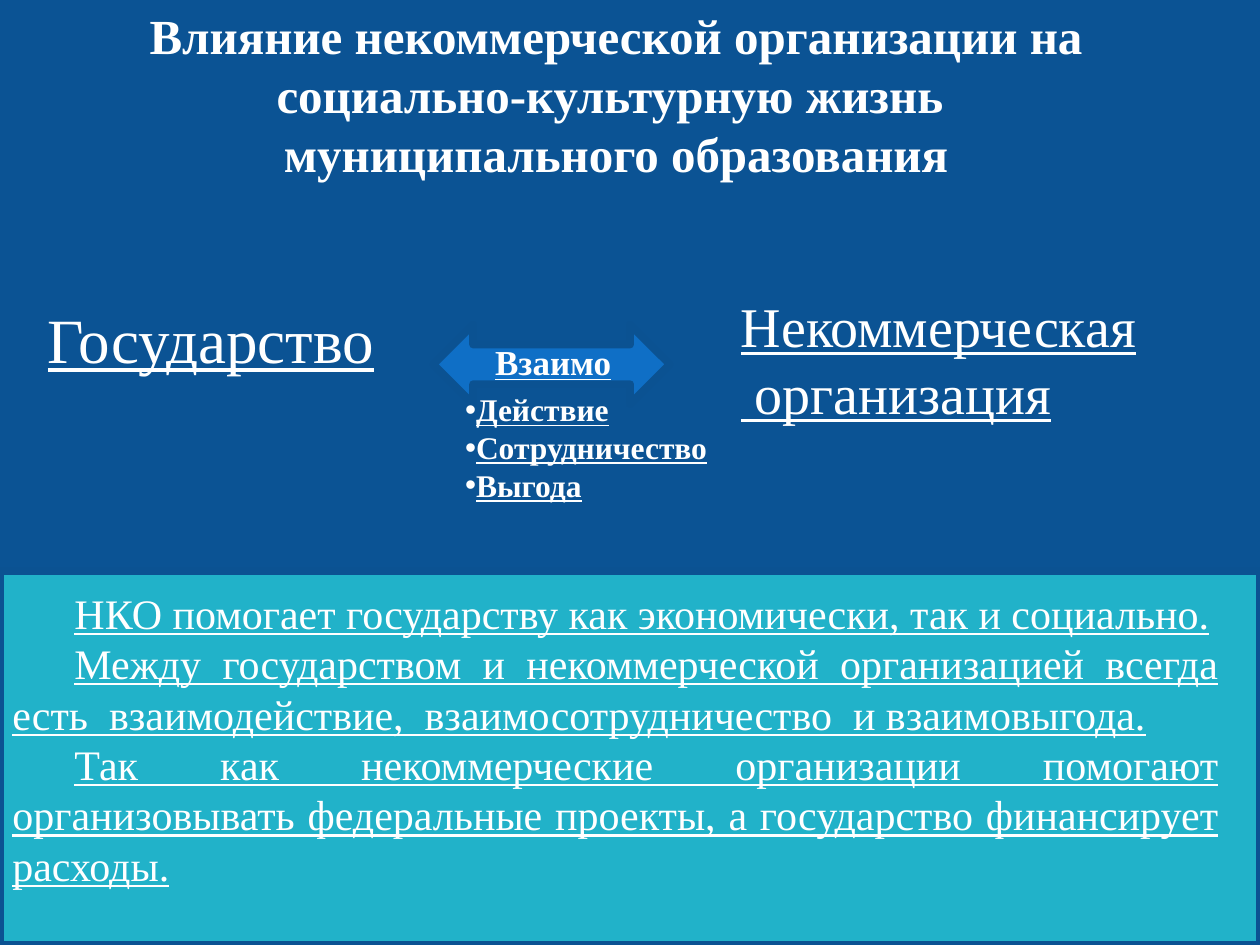
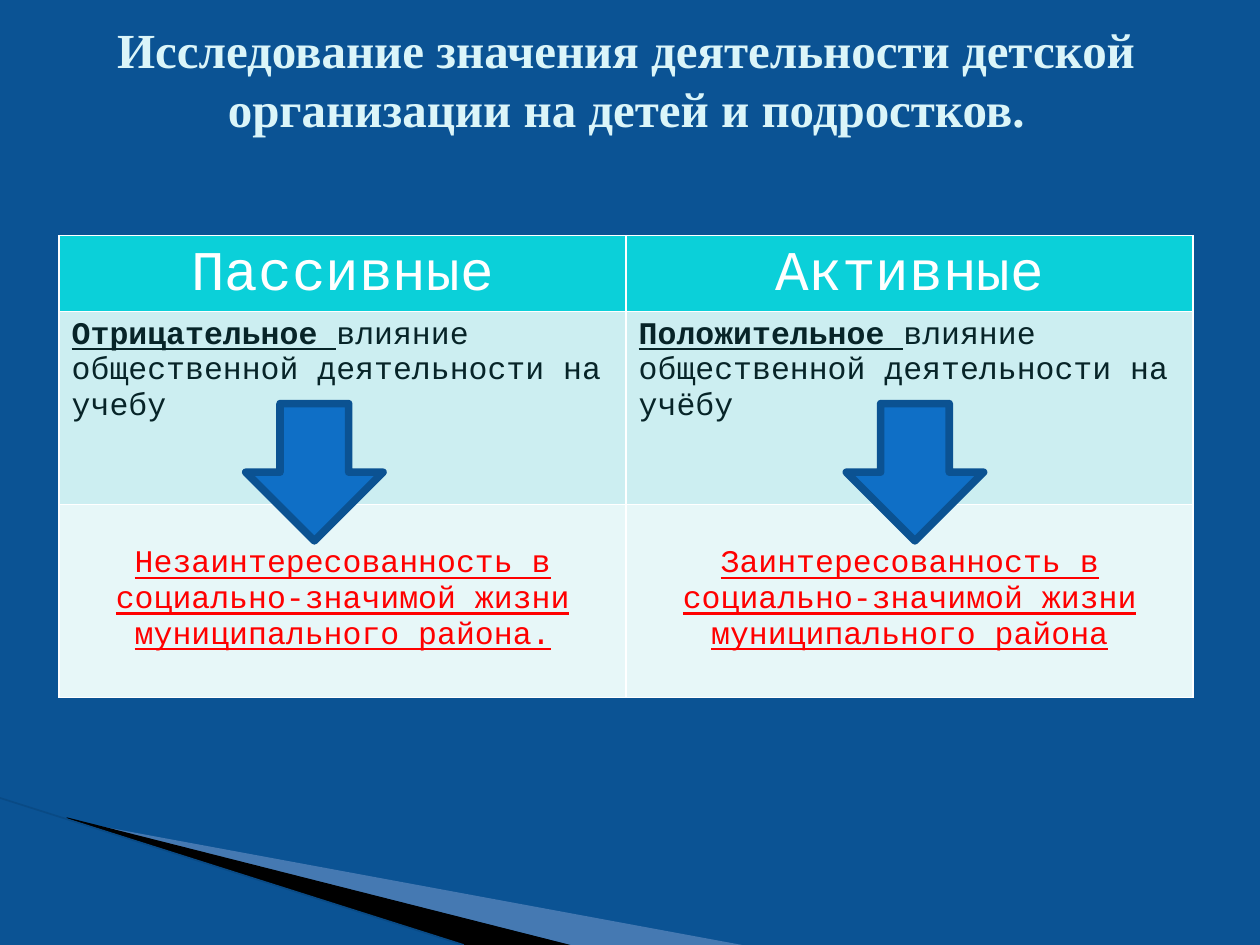
"""Two slides on non-profit organizations and their influence on community life."""
import pptx
import pptx.dml.color
import pptx.enum.shapes
import pptx.enum.text
import pptx.oxml.ns
import pptx.util
from lxml import etree

Pt = pptx.util.Pt
ALIGN = pptx.enum.text.PP_ALIGN
ANCHOR = pptx.enum.text.MSO_ANCHOR
SHAPE = pptx.enum.shapes.MSO_SHAPE
qn = pptx.oxml.ns.qn

SERIF, MONO = "Times New Roman", "Courier New"
WHITE, NAVY, EDGE, BLUE, TEAL = "FFFFFF", "0B5394", "0B5292", "0F6FC6", "21B2C9"
PALE, CYAN, INK, RED, DEEP = "DBF5F9", "0BD0D9", "072428", "FF0000", "094A85"
ROW_TINTS = ("CCEEF1", "E7F7F8")
WIDTH, HEIGHT = 720, 540


def rgb(value):
    """Turn a hex string into a colour."""
    return pptx.dml.color.RGBColor.from_string(value)


def style_run(run, size, color, face=SERIF, bold=False, underline=False):
    """Set the font of one run."""
    run.font.name = face
    run.font.size = Pt(size)
    run.font.bold = bold
    run.font.underline = underline
    run.font.color.rgb = rgb(color)


def add_text(slide, box, lines, size, color=WHITE, anchor=ANCHOR.TOP,
             align=ALIGN.LEFT, bold=False, underline=False):
    """Add a wrapped text box with one paragraph per line and return its frame."""
    frame = slide.shapes.add_textbox(*map(Pt, box)).text_frame
    frame.word_wrap = True
    frame.vertical_anchor = anchor
    for number, line in enumerate(lines):
        paragraph = frame.add_paragraph() if number else frame.paragraphs[0]
        paragraph.text = line
        paragraph.alignment = align
        for run in paragraph.runs:
            style_run(run, size, color, bold=bold, underline=underline)
    return frame


def add_title(slide, box, title, color):
    """Add the centred bold slide title."""
    add_text(slide, box, [title], 28, color, ANCHOR.MIDDLE, ALIGN.CENTER, bold=True)


def add_block(slide, kind, box, fill):
    """Add a filled preset shape with the shared thick edge."""
    block = slide.shapes.add_shape(kind, *map(Pt, box))
    block.shadow.inherit = False
    block.fill.solid()
    block.fill.fore_color.rgb = rgb(fill)
    block.line.color.rgb = rgb(EDGE)
    block.line.width = Pt(4.33)


def new_slide(deck):
    """Add a blank slide with the shared background and corner wedges."""
    slide = deck.slides.add_slide(deck.slide_layouts[6])
    slide.background.fill.solid()
    slide.background.fill.fore_color.rgb = rgb(NAVY)
    add_corner_wedges(slide, (0, 456, 424, HEIGHT - 456))
    return slide


def add_corner_wedges(slide, box):
    """Draw the decorative wedges and line in the lower left corner."""
    left, top, width, height = box
    wedges = (
        ("9DB2E1", 40, ((39.6, 12.7), (width, height), (325.5, height), (39.6, 12))),
        ("000000", 100, ((38.2, 11.3), (325.5, height), (265, height), (38.9, 12))),
    )
    for color, opacity, points in wedges:
        corners = [(left + x, top + y) for x, y in points]
        outline = slide.shapes.build_freeform(*corners[0], scale=Pt(1))
        outline.add_line_segments(corners[1:], close=True)
        wedge = outline.convert_to_shape()
        wedge.shadow.inherit = False
        wedge.line.fill.background()
        wedge.fill.solid()
        wedge.fill.fore_color.rgb = rgb(color)
        if opacity < 100:
            tint = wedge.fill._xPr.find(".//" + qn("a:srgbClr"))
            etree.SubElement(tint, qn("a:alpha"), val=str(opacity * 1000))
    edge = slide.shapes.add_connector(
        pptx.enum.shapes.MSO_CONNECTOR.STRAIGHT,
        Pt(left), Pt(top), Pt(left + 265), Pt(top + height))
    edge.line.color.rgb = rgb(DEEP)
    edge.line.width = Pt(0.95)
    etree.SubElement(edge._element.spPr, qn("a:effectLst"))


def add_interaction(slide, box):
    """Show the state and the organization linked by a double arrow."""
    left, top, width, height = box
    state = add_text(slide, (left + 11.5, top + 5, 262, 73), ["Государство"], 36,
                     underline=True)
    state.margin_left = Pt(15.8)
    add_block(slide, SHAPE.LEFT_RIGHT_ARROW,
              (left + 247.7, top + 22.6, 135, 45.2), BLUE)
    add_text(slide, (left + 416.2, top, width - 416.2, 85),
             ["Некоммерческая", " организация"], 32, underline=True)
    add_text(slide, (left + 275.8, top + 28.1, 106.6, 53.3), ["Взаимо"], 20,
             bold=True, underline=True)
    gains = add_text(slide, (left + 258.7, top + 56.6, 168.5, height - 56.6),
                     ["Действие", "Сотрудничество", "Выгода"], 18,
                     bold=True, underline=True)
    for gain in gains.paragraphs:
        properties = gain._p.get_or_add_pPr()
        etree.SubElement(properties, qn("a:buFont"), typeface="Arial")
        etree.SubElement(properties, qn("a:buChar"), char="•")


def add_conclusion(slide, box):
    """Add the teal panel with justified concluding paragraphs."""
    left, top, width, height = box
    add_block(slide, SHAPE.RECTANGLE, box, TEAL)
    frame = add_text(slide, (left, top + 5.8, width - 16.6, height - 17), [
        "НКО помогает государству как экономически, так и социально.",
        "Между государством и некоммерческой организацией всегда есть  "
        "взаимодействие,  взаимосотрудничество  и взаимовыгода.",
        "Так как некоммерческие организации помогают организовывать "
        "федеральные проекты, а государство финансирует расходы.",
    ], 24, align=ALIGN.JUSTIFY, underline=True)
    for paragraph in frame.paragraphs:
        paragraph._p.get_or_add_pPr().set("indent", str(Pt(35.5)))


def fill_cell(cell, tint, parts, align=ALIGN.LEFT):
    """Fill a table cell with styled runs, a tint and white borders."""
    paragraph = cell.text_frame.paragraphs[0]
    paragraph.alignment = align
    for wording, style in parts:
        run = paragraph.add_run()
        run.text = wording
        style_run(run, face=MONO, **style)
    properties = cell._tc.get_or_add_tcPr()
    for side in ("lnL", "lnR", "lnT", "lnB"):
        border = etree.SubElement(properties, qn("a:" + side), w=str(Pt(1)))
        paint = etree.SubElement(border, qn("a:solidFill"))
        etree.SubElement(paint, qn("a:srgbClr"), val=WHITE)
    cell.fill.solid()
    cell.fill.fore_color.rgb = rgb(tint)


def add_comparison(slide, box):
    """Compare passive and active children in a table with down arrows."""
    left, top, width, height = box
    attitudes = (
        ("Пассивные", "Отрицательное ", "учебу",
         "Незаинтересованность в социально-значимой жизни муниципального района."),
        ("Активные", "Положительное ", "учёбу",
         "Заинтересованность в социально-значимой жизни муниципального района"),
    )
    table = slide.shapes.add_table(3, 2, *map(Pt, box)).table
    header_height = 43.5
    row_height = (height - header_height) / 2
    for row, size in zip(table.rows, (header_height, row_height, row_height)):
        row.height = Pt(size)
    for column, (group, effect, study, outcome) in enumerate(attitudes):
        table.columns[column].width = Pt(width / 2)
        heading, influence, result = (table.cell(row, column) for row in range(3))
        fill_cell(heading, CYAN, [(group, dict(size=32, color=WHITE))], ALIGN.CENTER)
        heading.margin_top, heading.margin_bottom = Pt(5), Pt(0)
        fill_cell(influence, ROW_TINTS[0], [
            (effect, dict(size=18, color=INK, bold=True, underline=True)),
            ("влияние общественной деятельности на " + study,
             dict(size=18, color=INK)),
        ])
        fill_cell(result, ROW_TINTS[1],
                  [(outcome, dict(size=18, color=RED, underline=True))], ALIGN.CENTER)
        result.margin_top = Pt(24)
        add_block(slide, SHAPE.DOWN_ARROW,
                  (left + 106.6 + column * 343.2, top + 96, 78.5, 78.5), BLUE)


def build_influence_slide(deck):
    """Build the slide on the influence of a non-profit organization."""
    slide = new_slide(deck)
    add_conclusion(slide, (0, 326.2, WIDTH, HEIGHT - 326.2))
    add_title(slide, (28, 33.6, 648, 40),
              "Влияние некоммерческой организации на социально-культурную жизнь "
              "\vмуниципального образования", WHITE)
    add_interaction(slide, (0, 163, WIDTH, 129))


def build_research_slide(deck):
    """Build the slide on the research into children's activity."""
    slide = new_slide(deck)
    add_title(slide, (33.8, 0, 648, 90),
              "Исследование значения деятельности детской организации "
              "на детей и подростков.", PALE)
    add_comparison(slide, (33.8, 134.6, 648, 264))


def main():
    """Create and save the presentation."""
    deck = pptx.Presentation()
    deck.slide_width, deck.slide_height = Pt(WIDTH), Pt(HEIGHT)
    build_influence_slide(deck)
    build_research_slide(deck)
    deck.save("out.pptx")


if __name__ == "__main__":
    main()
